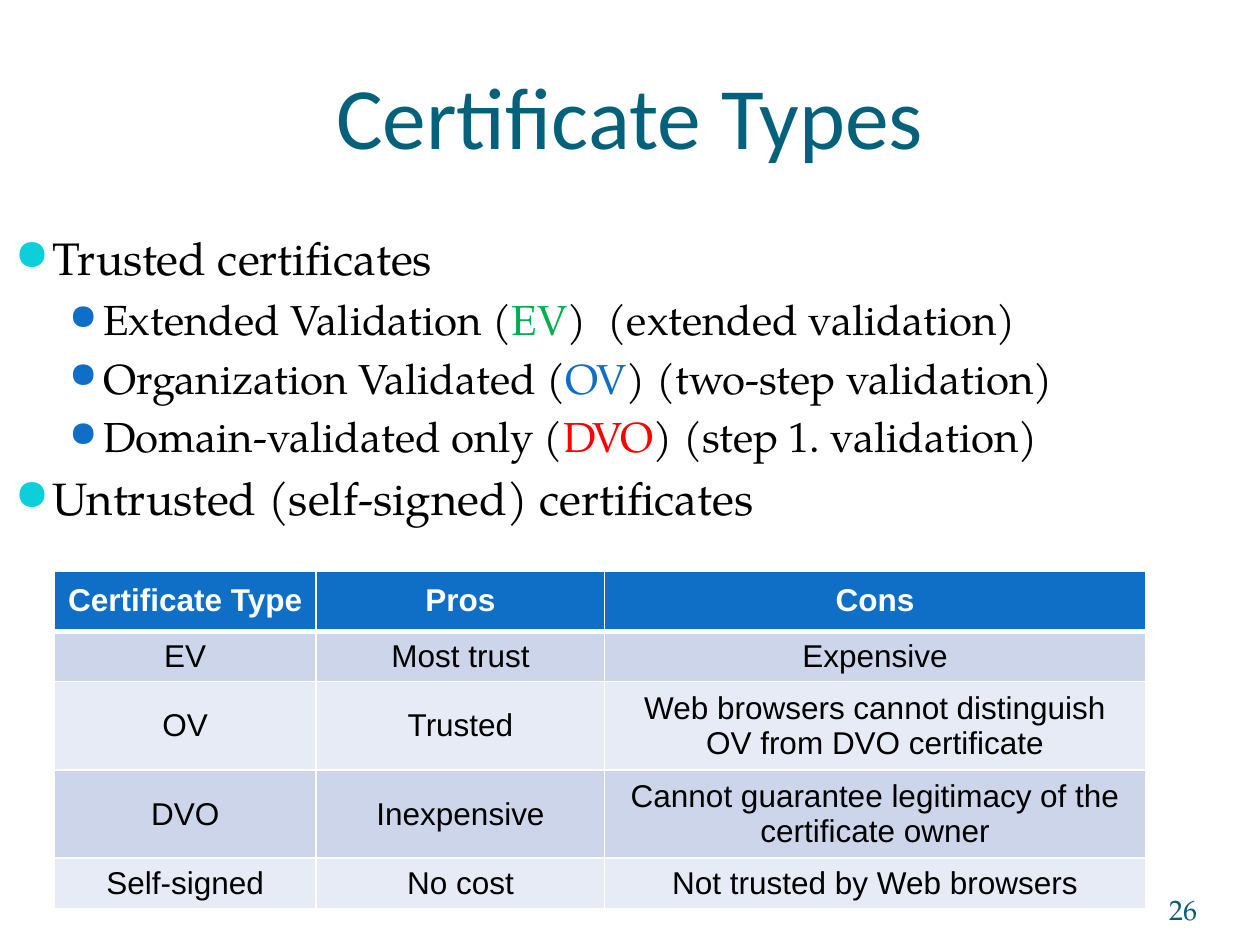
import pptx
import pptx.dml.color
import pptx.enum.text
import pptx.oxml.ns
import pptx.util
from lxml import etree

Inches = pptx.util.Inches
Pt = pptx.util.Pt
ALIGN = pptx.enum.text.PP_ALIGN
ANCHOR = pptx.enum.text.MSO_ANCHOR
SERIF = "TeX Gyre Pagella"

COLORS = {
    "title": "04617B", "number": "045D75", "text": "000000", "white": "FFFFFF",
    "cyan": "0BD0D9", "blue": "0F6FC6", "green": "00B050", "red": "FF0000",
    "band_dark": "CCD5EA", "band_light": "E7EBF5",
}
LEVELS = [
    {"size": 26, "left": 0.3, "hang": 0.3, "bullet": "cyan", "percent": 95},
    {"size": 24, "left": 0.7, "hang": 0.27, "bullet": "blue", "percent": 85},
]
OUTLINE = [
    (0, [("Trusted certificates", "text")]),
    (1, [("Extended Validation (", "text"), ("EV", "green"),
         (")  (extended validation)", "text")]),
    (1, [("Organization Validated (", "text"), ("OV", "blue"),
         (") (two-step validation)", "text")]),
    (1, [("Domain-validated only (", "text"), ("DVO", "red"),
         (") (step 1. validation)", "text")]),
    (0, [("Untrusted (self-signed) certificates", "text")]),
]
COMPARISON = [
    ("Certificate Type", "Pros", "Cons"),
    ("EV", "Most trust", "Expensive"),
    ("OV", "Trusted", "Web browsers cannot distinguish OV from DVO certificate"),
    ("DVO", "Inexpensive", "Cannot guarantee legitimacy of the certificate owner"),
    ("Self-signed", "No cost", "Not trusted by Web browsers"),
]
COLUMN_WIDTHS = [2.08, 2.29, 4.29]
ROW_HEIGHTS = [0.48, 0.4, 0.7, 0.7, 0.4]


def rgb(color):
    return pptx.dml.color.RGBColor.from_string(COLORS[color])


def add_element(parent, tag, **attributes):
    return etree.SubElement(parent, pptx.oxml.ns.qn(tag), **attributes)


def style_run(run, font, size, color, bold=False):
    run.font.name = font
    run.font.size = Pt(size)
    run.font.bold = bold
    run.font.color.rgb = rgb(color)


def add_frame(slide, left, top, width, height, anchor=ANCHOR.TOP):
    frame = slide.shapes.add_textbox(
        Inches(left), Inches(top), Inches(width), Inches(height)).text_frame
    frame.word_wrap = True
    frame.vertical_anchor = anchor
    return frame


def add_label(slide, box, text, font, size, color, align, anchor, inset_top=0):
    frame = add_frame(slide, *box, anchor)
    frame.margin_left = frame.margin_right = frame.margin_bottom = 0
    frame.margin_top = Inches(inset_top)
    frame.text = text
    label = frame.paragraphs[0]
    label.alignment = align
    style_run(label.runs[0], font, size, color)


def set_bullet(paragraph, level):
    properties = paragraph._p.get_or_add_pPr()
    properties.set("marL", str(Inches(level["left"])))
    properties.set("indent", str(-Inches(level["hang"])))
    bullet_color = add_element(properties, "a:buClr")
    add_element(bullet_color, "a:srgbClr", val=COLORS[level["bullet"]])
    add_element(properties, "a:buSzPct", val=str(level["percent"] * 1000))
    add_element(properties, "a:buChar", char="●")


def add_outline(slide):
    frame = add_frame(slide, 0.02, 1.78, 9.63, 4.8)
    for index, (depth, pieces) in enumerate(OUTLINE):
        point = frame.add_paragraph() if index else frame.paragraphs[0]
        level = LEVELS[depth]
        point.level = depth
        point.space_before = Pt(level["size"] * 0.2)
        set_bullet(point, level)
        for text, color in pieces:
            piece = point.add_run()
            piece.text = text
            style_run(piece, SERIF, level["size"], color)


def set_borders(cell, top, bottom):
    properties = cell._tc.get_or_add_tcPr()
    for side, width in (("L", 1), ("R", 1), ("T", top), ("B", bottom)):
        line = add_element(properties, f"a:ln{side}", w=str(Pt(width)))
        fill = add_element(line, "a:solidFill")
        add_element(fill, "a:srgbClr", val=COLORS["white"])


def fill_cell(cell, text, row):
    header = row == 0
    set_borders(cell, 3 if row == 1 else 1, 3 if header else 1)
    cell.fill.solid()
    band = "band_dark" if row % 2 else "band_light"
    cell.fill.fore_color.rgb = rgb("blue" if header else band)
    cell.vertical_anchor = ANCHOR.MIDDLE
    cell.text_frame.text = text
    entry = cell.text_frame.paragraphs[0]
    entry.alignment = ALIGN.CENTER
    style_run(entry.runs[0], "Arial", 18, "white" if header else "text", header)


def add_comparison(slide):
    table = slide.shapes.add_table(
        len(ROW_HEIGHTS), len(COLUMN_WIDTHS), Inches(0.43), Inches(4.53),
        Inches(sum(COLUMN_WIDTHS)), Inches(sum(ROW_HEIGHTS))).table
    for column, width in zip(table.columns, COLUMN_WIDTHS):
        column.width = Inches(width)
    for row, height in enumerate(ROW_HEIGHTS):
        table.rows[row].height = Inches(height)
        for column, text in enumerate(COMPARISON[row]):
            fill_cell(table.cell(row, column), text, row)


def main():
    deck = pptx.Presentation()
    deck.slide_width, deck.slide_height = Inches(10), Inches(7.5)
    slide = deck.slides.add_slide(deck.slide_layouts[6])
    add_outline(slide)
    add_label(slide, (0.5, 0.44, 9, 1.25), "Certificate Types", "Calibri", 50,
              "title", ALIGN.CENTER, ANCHOR.TOP, 0.05)
    add_label(slide, (8.67, 6.95, 0.83, 0.4), "26", SERIF, 16,
              "number", ALIGN.RIGHT, ANCHOR.BOTTOM)
    add_comparison(slide)
    deck.save("out.pptx")


if __name__ == "__main__":
    main()
